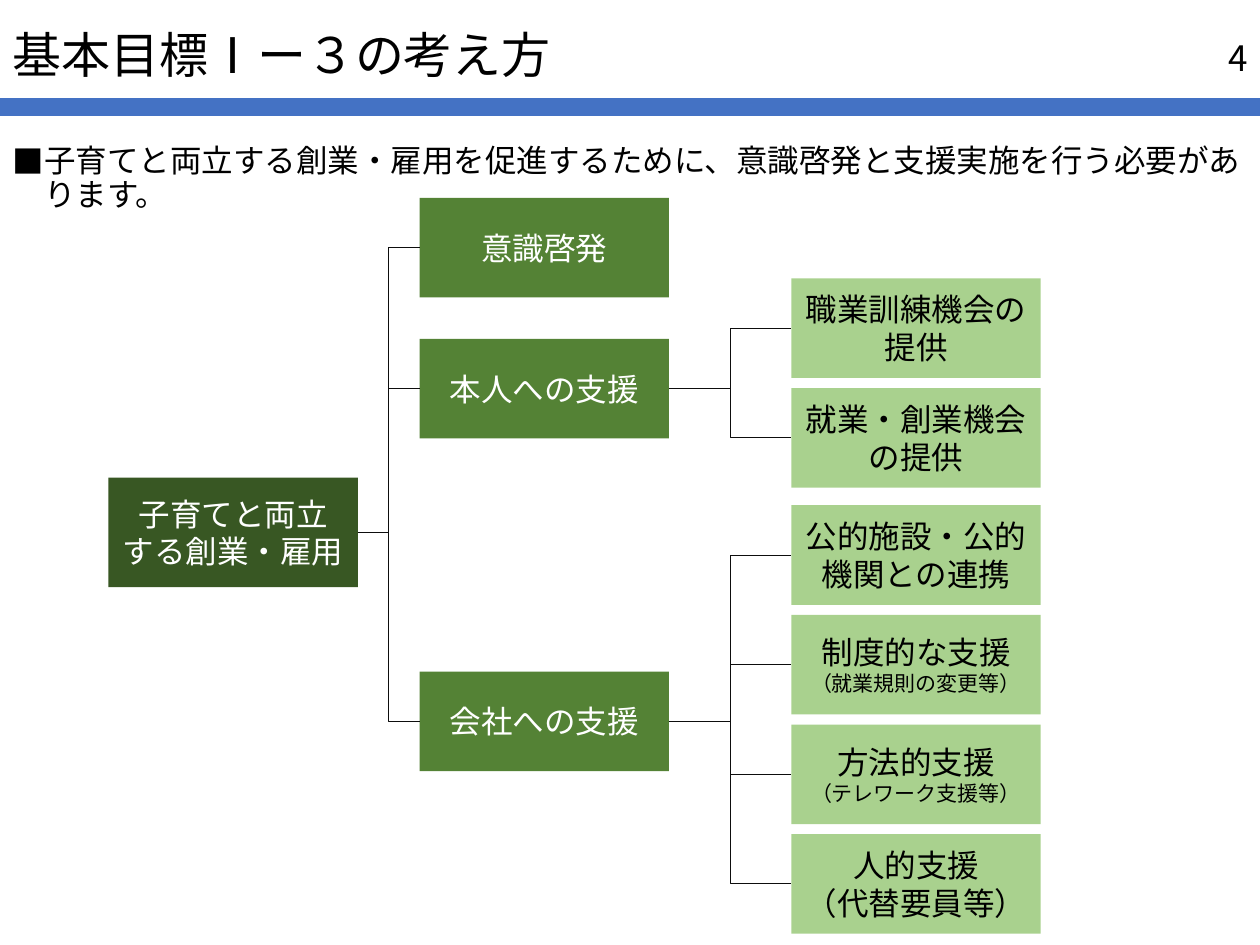
from lxml.etree import SubElement
from pptx import Presentation
from pptx.dml.color import RGBColor
from pptx.enum.lang import MSO_LANGUAGE_ID as Language
from pptx.enum.shapes import MSO_CONNECTOR as Connector, MSO_SHAPE as Shape
from pptx.enum.text import MSO_ANCHOR as Anchor, MSO_AUTO_SIZE as AutoSize, PP_ALIGN as Align
from pptx.oxml.ns import qn
from pptx.util import Inches, Pt

FONT = "Noto Sans CJK JP"
BLACK, WHITE, BLUE, LINE = "000000", "FFFFFF", "4472C4", "0D0D0D"
ROOT_FILL, BRANCH_FILL, LEAF_FILL = "385723", "548235", "A9D18E"
COLUMNS = (0.86, 3.33, 6.28)
BOX_WIDTH, BOX_HEIGHT, ROOT_HEIGHT = 1.98, 0.79, 0.87
LEAF_STEP = 0.87
LEFT_SITE, RIGHT_SITE = 1, 3

ROOT = [("子育てと両立", 18), ("する創業・雇用", 18)]
BRANCHES = [
    (1.57, "意識啓発", 0, []),
    (2.69, "本人への支援", 2.21, [
        [("職業訓練機会の提供", 18)],
        [("就業・創業機会の提供", 18)],
    ]),
    (5.33, "会社への支援", 4.01, [
        [("公的施設・公的機関との連携", 18)],
        [("制度的な支援", 18), ("（就業規則の変更等）", 12)],
        [("方法的支援", 18), ("（テレワーク支援等）", 12)],
        [("人的支援", 18), ("（代替要員等）", 18)],
    ]),
]


def color(value):
    return RGBColor.from_string(value)


def apply(target, values):
    for name, value in values.items():
        setattr(target, name, value)


def area(left, top, width, height):
    return [Inches(length) for length in (left, top, width, height)]


def place(box, bounds):
    apply(box, dict(zip(("left", "top", "width", "height"), area(*bounds))))


def write(box, lines, ink=BLACK, anchor=Anchor.MIDDLE, **paragraph_format):
    frame = box.text_frame
    apply(frame, {"word_wrap": True, "auto_size": AutoSize.NONE, "vertical_anchor": anchor})
    for number, (text, size) in enumerate(lines):
        para = frame.add_paragraph() if number else frame.paragraphs[0]
        apply(para, paragraph_format)
        span = para.add_run()
        span.text = text
        apply(span.font, {"size": Pt(size), "name": FONT, "bold": False,
                          "language_id": Language.JAPANESE})
        span.font.color.rgb = color(ink)
        SubElement(span.font._element, qn("a:ea"), typeface=FONT)


def add_block(page, bounds, fill):
    box = page.shapes.add_shape(Shape.RECTANGLE, *area(*bounds))
    box.shadow.inherit = False
    box.fill.solid()
    box.fill.fore_color.rgb = color(fill)
    box.line.fill.background()
    return box


def add_node(page, column, top, lines, fill, ink, height=BOX_HEIGHT):
    box = add_block(page, (COLUMNS[column], top, BOX_WIDTH, height), fill)
    write(box, lines, ink, alignment=Align.CENTER)
    return box


def link(page, parent, child):
    line = page.shapes.add_connector(Connector.ELBOW, 0, 0, 0, 0)
    line.begin_connect(parent, RIGHT_SITE)
    line.end_connect(child, LEFT_SITE)
    line.line.color.rgb = color(LINE)
    line.line.width = Pt(0.5)
    SubElement(line._element.spPr, qn("a:effectLst"))


def add_heading(page):
    add_block(page, (0, 0.78, 10, 0.14), BLUE)
    title = page.shapes.title
    place(title, (0, 0.31, 10, 0.29))
    write(title, [("基本目標Ⅰー３の考え方", 28)], alignment=Align.LEFT, line_spacing=0.9)
    number = page.shapes.add_textbox(*area(7.75, 0.26, 2.25, 0.4))
    write(number, [("4", 20)], alignment=Align.RIGHT)


def add_message(page):
    body = page.placeholders[1]
    place(body, (0, 1.1, 10, 0.78))
    text = "子育てと両立する創業・雇用を促進するために、意識啓発と支援実施を行う必要があります。"
    write(body, [(text, 18)], anchor=Anchor.TOP, line_spacing=0.9, space_before=Pt(10))
    properties = body.text_frame.paragraphs[0]._p.get_or_add_pPr()
    properties.set("marL", str(Inches(0.25)))
    properties.set("indent", str(-Inches(0.25)))
    SubElement(properties, qn("a:buFont"), typeface=FONT)
    SubElement(properties, qn("a:buChar"), char="■")


def add_tree(page):
    root = add_node(page, 0, 3.79, ROOT, ROOT_FILL, WHITE, ROOT_HEIGHT)
    for top, label, first_leaf, leaves in BRANCHES:
        branch = add_node(page, 1, top, [(label, 18)], BRANCH_FILL, WHITE)
        link(page, root, branch)
        for row, lines in enumerate(leaves):
            leaf = add_node(page, 2, first_leaf + row * LEAF_STEP, lines, LEAF_FILL, BLACK)
            link(page, branch, leaf)


def main():
    deck = Presentation()
    apply(deck, {"slide_width": Inches(10), "slide_height": Inches(7.5)})
    page = deck.slides.add_slide(deck.slide_layouts[1])
    add_heading(page)
    add_message(page)
    add_tree(page)
    deck.save("out.pptx")


if __name__ == "__main__":
    main()
